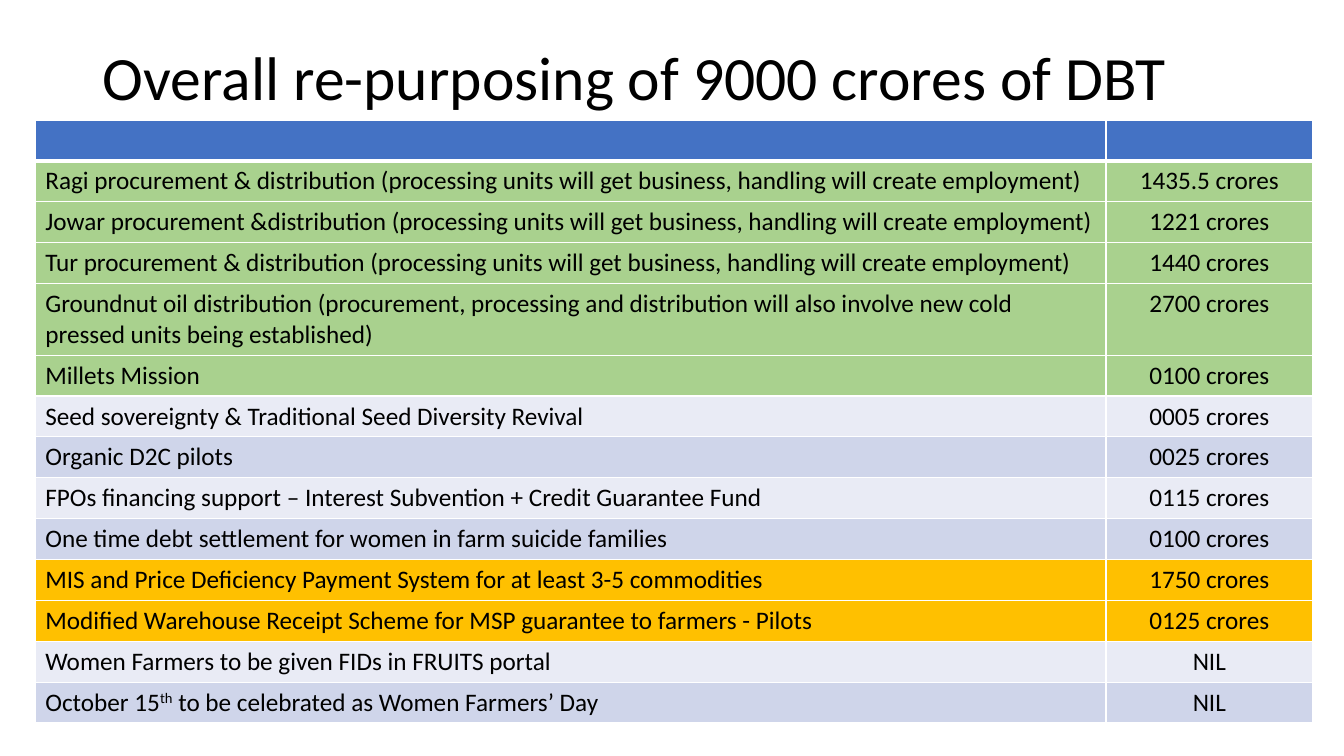
import pptx
import pptx.util
import pptx.dml.color
import pptx.enum.text
import pptx.oxml
import pptx.oxml.ns
import lxml.etree

Inches = pptx.util.Inches
ALIGN = pptx.enum.text.PP_ALIGN
ANCHOR = pptx.enum.text.MSO_ANCHOR

WHITE, BLACK, BLUE = "FFFFFF", "000000", "4472C4"
GREEN, GOLD, PALE, MIST = "A9D18E", "FFC000", "E9EBF5", "CFD5EA"
WORK = "(processing units will get business, handling will create employment)"

# Text between carets is raised.
ROWS = [
    ("", "", BLUE),
    (f"Ragi procurement & distribution {WORK}", "1435.5 crores", GREEN),
    (f"Jowar procurement &distribution {WORK}", "1221 crores", GREEN),
    (f"Tur procurement & distribution {WORK}", "1440 crores", GREEN),
    ("Groundnut oil distribution (procurement, processing and distribution "
     "will also involve new cold pressed units being established)",
     "2700 crores", GREEN),
    ("Millets Mission", "0100 crores", GREEN),
    ("Seed sovereignty & Traditional Seed Diversity Revival", "0005 crores", PALE),
    ("Organic D2C pilots", "0025 crores", MIST),
    ("FPOs financing support – Interest Subvention + Credit Guarantee Fund",
     "0115 crores", PALE),
    ("One time debt settlement for women in farm suicide families",
     "0100 crores", MIST),
    ("MIS and Price Deficiency Payment System for at least 3-5 commodities",
     "1750 crores", GOLD),
    ("Modified Warehouse Receipt Scheme for MSP guarantee to farmers - Pilots",
     "0125 crores", GOLD),
    ("Women Farmers to be given FIDs in FRUITS portal", "NIL", PALE),
    ("October 15^th^ to be celebrated as Women Farmers’ Day", "NIL", MIST),
]


def color(code):
    return pptx.dml.color.RGBColor.from_string(code)


def style(item, **values):
    for name, value in values.items():
        setattr(item, name, value)


def write(para, text, size):
    """Add the text as runs, raising the parts between carets."""
    for index, part in enumerate(text.split("^")):
        if not part:
            continue
        run = para.add_run()
        run.text = part
        style(run.font, name="Calibri", size=pptx.util.Pt(size))
        run.font.color.rgb = color(BLACK)
        if index % 2:
            run._r.get_or_add_rPr().set("baseline", "30000")


def border(cell, widths):
    """Draw white cell edges; widths maps each side to points."""
    props = cell._tc.get_or_add_tcPr()
    for side, width in widths.items():
        line = lxml.etree.SubElement(
            props, pptx.oxml.ns.qn(f"a:ln{side}"), w=str(pptx.util.Pt(width)))
        fill = lxml.etree.SubElement(line, pptx.oxml.ns.qn("a:solidFill"))
        lxml.etree.SubElement(fill, pptx.oxml.ns.qn("a:srgbClr"), val=WHITE)


def add_title(slide, text, left, top, width, height):
    title = slide.shapes.title
    style(title, left=Inches(left), top=Inches(top),
          width=Inches(width), height=Inches(height))
    style(title.text_frame, vertical_anchor=ANCHOR.MIDDLE, word_wrap=True)
    para = title.text_frame.paragraphs[0]
    style(para, alignment=ALIGN.LEFT, line_spacing=0.9)
    write(para, text, 44)


def add_budget(slide, left, top, width, height):
    """Fill the box with schemes on the left and amounts on the right."""
    table = slide.shapes.add_table(
        len(ROWS), 2, Inches(left), Inches(top),
        Inches(width), Inches(height)).table
    amount = 2.05
    table.columns[0].width = Inches(width - amount)
    table.columns[1].width = Inches(amount)
    for index, (scheme, cost, shade) in enumerate(ROWS):
        edges = {"L": 1, "R": 1, "T": 3 if index == 1 else 1,
                 "B": 3 if index == 0 else 1}
        pairs = ((scheme, ALIGN.LEFT), (cost, ALIGN.CENTER))
        for column, (text, align) in enumerate(pairs):
            cell = table.cell(index, column)
            border(cell, edges)
            cell.fill.solid()
            cell.fill.fore_color.rgb = color(shade)
            para = cell.text_frame.paragraphs[0]
            para.alignment = align
            write(para, text, 18)


def main():
    deck = pptx.Presentation()
    style(deck, slide_width=Inches(13.33), slide_height=Inches(7.5))
    slide = deck.slides.add_slide(deck.slide_layouts[5])
    add_title(slide, "Overall re-purposing of 9000 crores of DBT",
              0.92, 0.4, 11.5, 0.79)
    add_budget(slide, 0.35, 1.19, 12.67, 5.6)
    deck.save("out.pptx")


if __name__ == "__main__":
    main()
